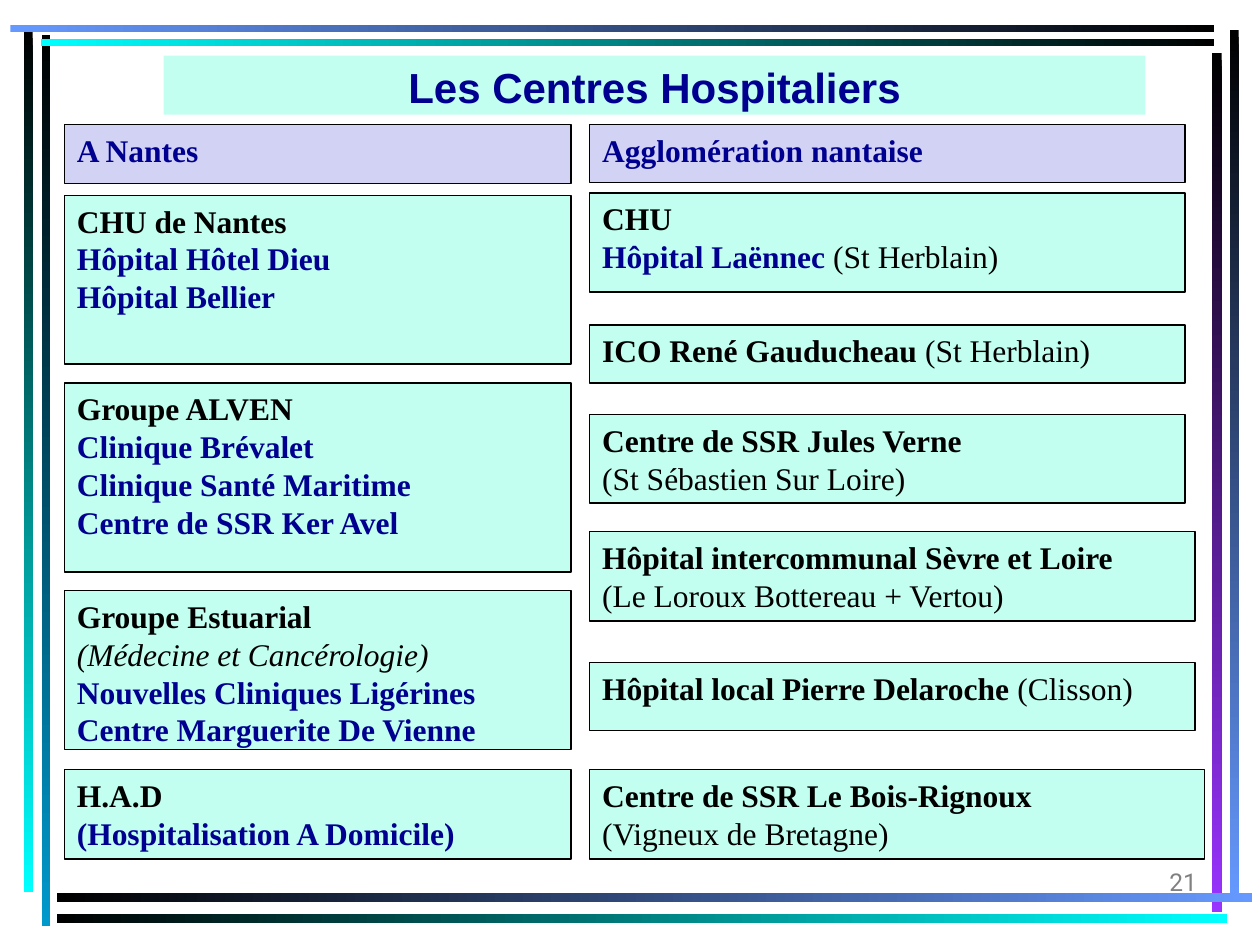
from pptx import Presentation
from pptx.dml.color import RGBColor
from pptx.enum.shapes import MSO_SHAPE
from pptx.enum.text import MSO_ANCHOR, MSO_AUTO_SIZE, PP_ALIGN
from pptx.util import Cm, Pt

RECT = MSO_SHAPE.RECTANGLE
TOP, BOTTOM = MSO_ANCHOR.TOP, MSO_ANCHOR.BOTTOM
LEFT, CENTER, RIGHT = PP_ALIGN.LEFT, PP_ALIGN.CENTER, PP_ALIGN.RIGHT
FIXED = MSO_AUTO_SIZE.NONE

BLACK, NAVY, GREY = "000000", "000090", "808080"
MINT, LILAC = "C2FFF0", "D2D2F4"
CYAN, TEAL, BLUE, VIOLET = "00FFFF", "0099CC", "6699FF", "9933FF"

HEAD = (BLACK, True, False)
NAME = (NAVY, True, False)
PLAIN = (BLACK, False, False)
NOTE = (BLACK, False, True)

BARS = [
    (0.84, 0.71, 0.18, 17.96, BLACK, TEAL),
    (0.48, 0.64, 0.18, 17.35, BLACK, CYAN),
    (24.79, 0.61, 0.18, 17.55, BLACK, BLUE),
    (24.43, 1.07, 0.2, 17.32, BLACK, VIOLET),
    (1.14, 18.01, 24.1, 0.18, BLACK, BLUE),
    (1.14, 18.42, 23.6, 0.18, BLACK, CYAN),
    (0.82, 0.79, 23.65, 0.13, CYAN, BLACK),
    (0.21, 0.5, 24.26, 0.15, BLUE, BLACK),
]

NANTES = [
    (2.51, 1.19, 10.21, LILAC, [[("A Nantes", NAME)]]),
    (3.94, 3.4, 10.21, MINT, [
        [("CHU de Nantes", HEAD)],
        [("Hôpital Hôtel Dieu", NAME)],
        [("Hôpital Bellier", NAME)]]),
    (7.72, 3.81, 10.21, MINT, [
        [("Groupe ALVEN", HEAD)],
        [("Clinique Brévalet", NAME)],
        [("Clinique Santé Maritime", NAME)],
        [("Centre de SSR Ker Avel", NAME)]]),
    (11.91, 3.2, 10.21, MINT, [
        [("Groupe Estuarial", HEAD)],
        [("(Médecine et Cancérologie)", NOTE)],
        [("Nouvelles Cliniques Ligérines", NAME)],
        [("Centre Marguerite De Vienne", NAME)]]),
    (15.52, 1.8, 10.21, MINT, [
        [("H.A.D", HEAD)],
        [("(Hospitalisation A Domicile)", NAME)]]),
]

AROUND = [
    (2.51, 1.17, 12, LILAC, [[("Agglomération nantaise", NAME)]]),
    (3.89, 2, 12, MINT, [
        [("CHU", HEAD)],
        [("Hôpital Laënnec ", NAME), ("(St Herblain)", PLAIN)]]),
    (6.55, 1.17, 12, MINT, [
        [("ICO René Gauducheau ", HEAD), ("(St Herblain)", PLAIN)]]),
    (8.36, 1.78, 12, MINT, [
        [("Centre de SSR Jules Verne", HEAD)],
        [("(St Sébastien Sur Loire)", PLAIN)]]),
    (10.72, 1.8, 12.2, MINT, [
        [("Hôpital intercommunal Sèvre et Loire", HEAD)],
        [("(Le Loroux Bottereau + Vertou)", PLAIN)]]),
    (13.36, 1.37, 12.2, MINT, [
        [("Hôpital local Pierre Delaroche ", HEAD), ("(Clisson)", PLAIN)]]),
    (15.52, 1.8, 12.4, MINT, [
        [("Centre de SSR Le Bois-Rignoux", HEAD)],
        [("(Vigneux de Bretagne)", PLAIN)]]),
]


def paint(fill, shade):
    """Fill with one solid colour."""
    fill.solid()
    fill.fore_color.rgb = RGBColor.from_string(shade)


def style(run, face, size, shade, bold=False, slant=False):
    """Format one run."""
    font = run.font
    font.name, font.size = face, Pt(size)
    font.bold, font.italic = bold, slant
    font.color.rgb = RGBColor.from_string(shade)


def frame(shape, anchor):
    """Prepare a wrapping text frame of fixed size and return it."""
    text = shape.text_frame
    text.word_wrap = True
    text.auto_size = FIXED
    text.vertical_anchor = anchor
    return text


def block(slide, x, y, w, h):
    """Add a rectangle without shadow."""
    shape = slide.shapes.add_shape(RECT, Cm(x), Cm(y), Cm(w), Cm(h))
    shape.shadow.inherit = False
    return shape


def bar(slide, x, y, w, h, start, end):
    """Add a border bar that fades along its length."""
    shape = block(slide, x, y, w, h)
    shape.line.fill.background()
    shape.fill.gradient()
    shape.fill.gradient_angle = 270 if h > w else 0
    for stop, shade in zip(shape.fill.gradient_stops, (start, end)):
        stop.color.rgb = RGBColor.from_string(shade)


def card(slide, x, y, w, h, shade, lines):
    """Add an outlined box holding lines of styled pieces."""
    shape = block(slide, x, y, w, h)
    paint(shape.fill, shade)
    paint(shape.line.fill, BLACK)
    shape.line.width = Pt(0.75)
    text = frame(shape, TOP)
    for i, line in enumerate(lines):
        para = text.add_paragraph() if i else text.paragraphs[0]
        para.alignment = LEFT
        for words, look in line:
            run = para.add_run()
            run.text = words
            style(run, "Times New Roman", 18, *look)


def label(shape, words, anchor, align, *look):
    """Set one line of text in a shape."""
    text = frame(shape, anchor)
    text.text = words
    para = text.paragraphs[0]
    para.alignment = align
    style(para.runs[0], *look)


def title(slide, words):
    """Place and format the title."""
    shape = slide.shapes.title
    shape.left, shape.top = Cm(3.3), Cm(1.12)
    shape.width, shape.height = Cm(19.79), Cm(1.19)
    paint(shape.fill, MINT)
    label(shape, words, TOP, CENTER, "Arial", 24, NAVY, True)


def main():
    """Build the slide and save it."""
    deck = Presentation()
    deck.slide_width, deck.slide_height = Cm(25.4), Cm(19.05)
    slide = deck.slides.add_slide(deck.slide_layouts[5])
    for spot in BARS:
        bar(slide, *spot)
    title(slide, "Les Centres Hospitaliers")
    for x, cards in ((1.3, NANTES), (11.89, AROUND)):
        for y, h, w, shade, lines in cards:
            card(slide, x, y, w, h, shade, lines)
    page = slide.shapes.add_textbox(Cm(19.1), Cm(16.92), Cm(5.28), Cm(1.27))
    label(page, "21", BOTTOM, RIGHT, "Roboto", 14, GREY)
    deck.save("out.pptx")


if __name__ == "__main__":
    main()
